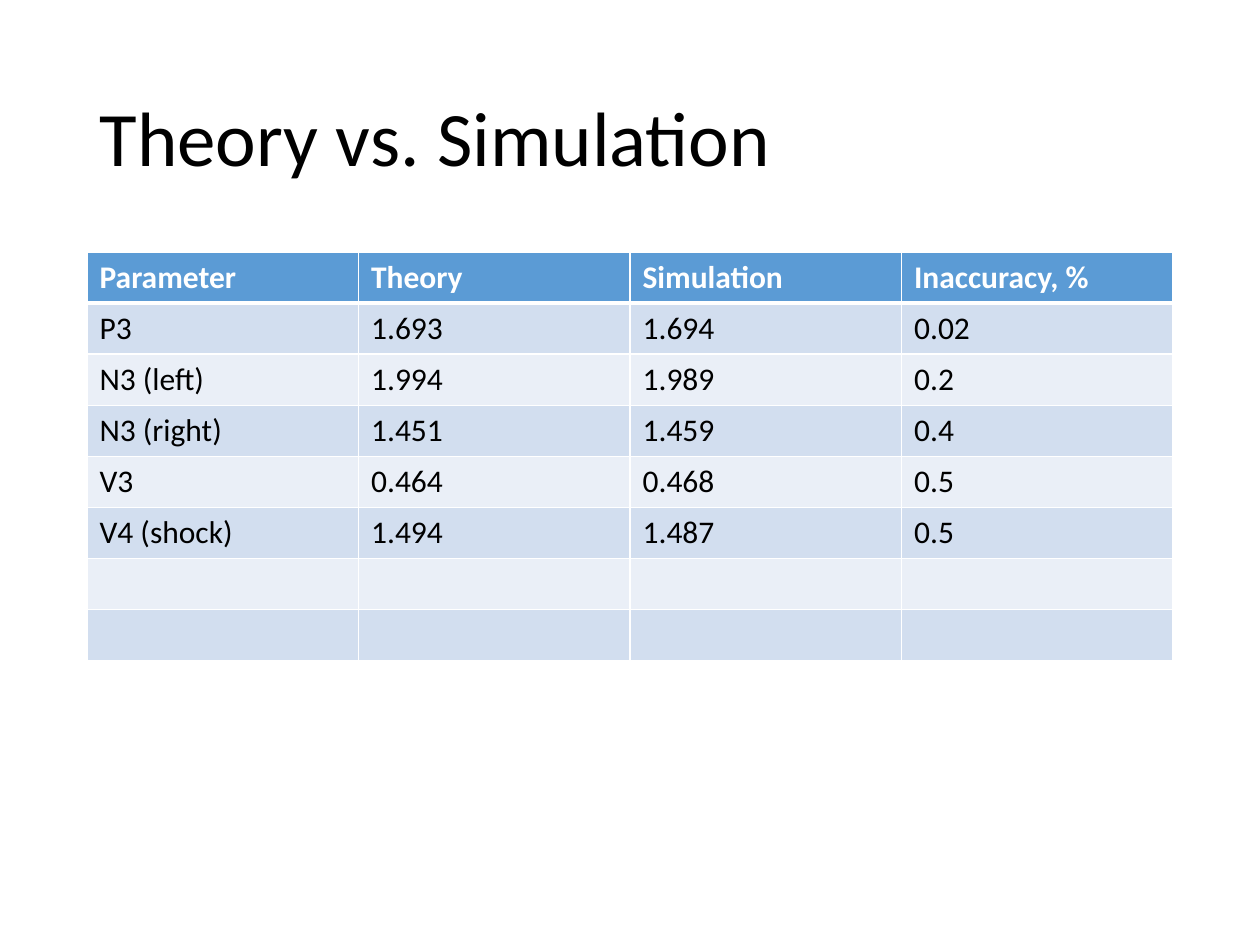
from lxml.etree import SubElement
from pptx import Presentation
from pptx.dml.color import RGBColor
from pptx.enum.text import MSO_ANCHOR, MSO_AUTO_SIZE, PP_ALIGN
from pptx.oxml.ns import qn
from pptx.util import Emu, Pt

PX = 914400 / 126
FONT = "Calibri"
COLORS = {
    "text": "000000",
    "white": "FFFFFF",
    "header": "5B9BD5",
    "odd": "D2DEEF",
    "even": "EAEFF7",
}
LEFT, WIDTH = 87, 1086
ROW_HEIGHT = 51
ROWS = [
    ("Parameter", "Theory", "Simulation", "Inaccuracy, %"),
    ("P3", "1.693", "1.694", "0.02"),
    ("N3 (left)", "1.994", "1.989", "0.2"),
    ("N3 (right)", "1.451", "1.459", "0.4"),
    ("V3", "0.464", "0.468", "0.5"),
    ("V4 (shock)", "1.494", "1.487", "0.5"),
    ("",) * 4,
    ("",) * 4,
]


def px(n):
    return Emu(round(n * PX))


def rgb(name):
    return RGBColor.from_string(COLORS[name])


class SlideBuilder:
    """Holds the text style and the slide being filled."""

    def __init__(self, slide, font):
        self.slide = slide
        self.font = font

    def add_run(self, p, text, size, color, bold=False):
        r = p.add_run()
        r.text = text
        r.font.name = self.font
        r.font.size = Pt(size)
        r.font.bold = bold
        r.font.color.rgb = rgb(color)

    def title(self, text, x, y, w, h):
        sp = self.slide.shapes.title
        sp.left, sp.top, sp.width, sp.height = map(px, (x, y, w, h))
        tf = sp.text_frame
        tf.word_wrap = True
        tf.auto_size = MSO_AUTO_SIZE.NONE
        tf.vertical_anchor = MSO_ANCHOR.MIDDLE
        p = tf.paragraphs[0]
        p.alignment = PP_ALIGN.LEFT
        p.line_spacing = 0.9
        self.add_run(p, text, 44, "text")

    def table(self, rows, x, y, w, row_height):
        """Add a table with a header row and banded body rows."""
        frame = self.slide.shapes.add_table(
            len(rows), len(rows[0]), px(x), px(y), px(w), px(row_height * len(rows)))
        table = frame.table
        for row in table.rows:
            row.height = px(row_height)
        for i, values in enumerate(rows):
            header = i == 0
            fill = "header" if header else "odd" if i % 2 else "even"
            for j, value in enumerate(values):
                cell = table.cell(i, j)
                self.borders(cell, top=3 if i == 1 else 1, bottom=3 if header else 1)
                cell.fill.solid()
                cell.fill.fore_color.rgb = rgb(fill)
                if value:
                    self.add_run(cell.text_frame.paragraphs[0], value, 18,
                                 "white" if header else "text", header)

    def borders(self, cell, top, bottom):
        """Draw white borders; widths are in points, 1 at the sides."""
        tc_pr = cell._tc.get_or_add_tcPr()
        for side, width in zip("LRTB", (1, 1, top, bottom)):
            ln = SubElement(tc_pr, qn(f"a:ln{side}"), w=str(Pt(width)))
            fill = SubElement(ln, qn("a:solidFill"))
            SubElement(fill, qn("a:srgbClr"), val=COLORS["white"])


def main():
    prs = Presentation()
    prs.slide_width, prs.slide_height = px(1260), px(945)
    title_only = prs.slide_layouts[5]
    s = SlideBuilder(prs.slides.add_slide(title_only), FONT)
    s.title("Theory vs. Simulation", LEFT, 50, WIDTH, 183)
    s.table(ROWS, LEFT, 252, WIDTH, ROW_HEIGHT)
    prs.save("out.pptx")


if __name__ == "__main__":
    main()
